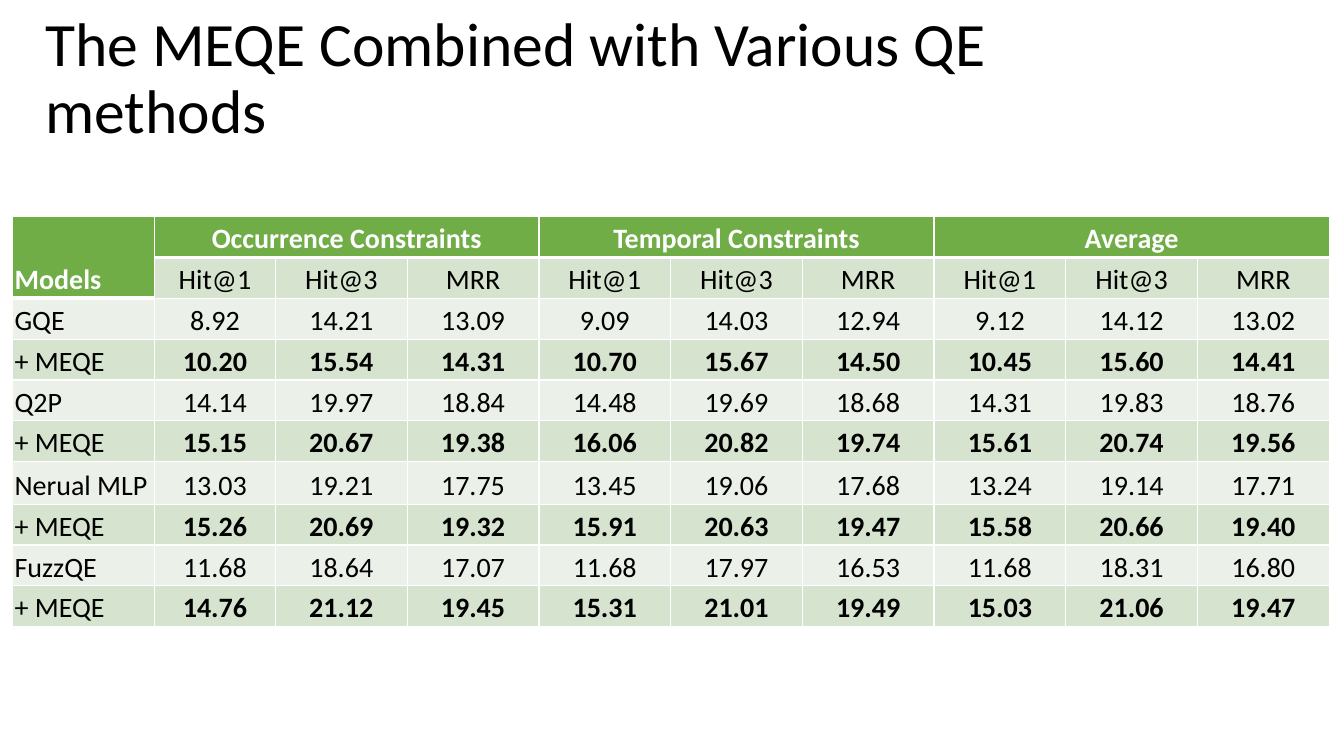
from dataclasses import dataclass

from lxml import etree
from pptx import Presentation
from pptx.dml.color import RGBColor
from pptx.enum import text
from pptx.oxml.ns import qn
from pptx.util import Pt

COLORS = {
    "white": "FFFFFF",
    "black": "000000",
    "header": "70AD47",
    "band_dark": "D5E3CF",
    "band_light": "EBF1E9",
}
FONT = "Calibri"
THIN, THICK = 1, 3
MODEL_WIDTH, FIRST_WIDTH, METRIC_WIDTH = 101.5, 86.4, 94.1
ROW_HEIGHT, TALL_ROW_HEIGHT = 29.15, 30.5
GROUPS = ["Occurrence Constraints", "Temporal Constraints", "Average"]
METRICS = ["Hit@1", "Hit@3", "MRR"]


@dataclass
class Result:
    model: str
    scores: str
    height: float = ROW_HEIGHT


RESULTS = [
    Result("GQE", "8.92 14.21 13.09 9.09 14.03 12.94 9.12 14.12 13.02"),
    Result("+ MEQE", "10.20 15.54 14.31 10.70 15.67 14.50 10.45 15.60 14.41"),
    Result("Q2P", "14.14 19.97 18.84 14.48 19.69 18.68 14.31 19.83 18.76"),
    Result("+ MEQE", "15.15 20.67 19.38 16.06 20.82 19.74 15.61 20.74 19.56"),
    Result("Nerual MLP", "13.03 19.21 17.75 13.45 19.06 17.68 13.24 19.14 17.71",
           TALL_ROW_HEIGHT),
    Result("+ MEQE", "15.26 20.69 19.32 15.91 20.63 19.47 15.58 20.66 19.40"),
    Result("FuzzQE", "11.68 18.64 17.07 11.68 17.97 16.53 11.68 18.31 16.80"),
    Result("+ MEQE", "14.76 21.12 19.45 15.31 21.01 19.49 15.03 21.06 19.47"),
]


def write(tf, words: str, *, size: float = 20, color: str = "black",
          bold: bool = False, align=text.PP_ALIGN.LEFT, spacing: float = 1.0) -> None:
    p = tf.paragraphs[0]
    p.alignment = align
    p.line_spacing = spacing
    r = p.add_run()
    r.text = words
    r.font.name = FONT
    r.font.size = Pt(size)
    r.font.bold = bold
    r.font.color.rgb = RGBColor.from_string(COLORS[color])


def style_cell(cell, fill: str, top: float, bottom: float) -> None:
    cell.margin_left = cell.margin_right = Pt(1.5)
    cell.margin_top = cell.margin_bottom = Pt(0.75)
    cell.vertical_anchor = text.MSO_ANCHOR.BOTTOM
    # Borders come before the fill in the cell properties
    tc_pr = cell._tc.get_or_add_tcPr()
    for side, width in (("L", THIN), ("R", THIN), ("T", top), ("B", bottom)):
        ln = etree.SubElement(tc_pr, qn(f"a:ln{side}"), w=str(Pt(width)))
        solid = etree.SubElement(ln, qn("a:solidFill"))
        etree.SubElement(solid, qn("a:srgbClr"), val=COLORS["white"])
    cell.fill.solid()
    cell.fill.fore_color.rgb = RGBColor.from_string(COLORS[fill])


def add_title(s, words: str) -> None:
    sp = s.shapes.add_textbox(Pt(25.2), Pt(5), Pt(849), Pt(104.4))
    tf = sp.text_frame
    tf.word_wrap = True
    tf.vertical_anchor = text.MSO_ANCHOR.MIDDLE
    write(tf, words, size=44, spacing=0.9)


def add_results_table(s) -> None:
    widths = [MODEL_WIDTH, FIRST_WIDTH] + [METRIC_WIDTH] * 8
    heights = [ROW_HEIGHT] * 2 + [result.height for result in RESULTS]
    table = s.shapes.add_table(len(heights), len(widths), Pt(8.9), Pt(154.8),
                               Pt(sum(widths)), Pt(sum(heights))).table
    for column, width in zip(table.columns, widths):
        column.width = Pt(width)
    for row, height in zip(table.rows, heights):
        row.height = Pt(height)

    # Fills and borders, with a heavy rule below the header
    def is_header(i: int, j: int) -> bool:
        return i == 0 or (i == 1 and j == 0)

    for i in range(len(heights)):
        band = "band_dark" if i % 2 else "band_light"
        for j in range(len(widths)):
            header = is_header(i, j)
            below_header = i > 0 and not header and is_header(i - 1, j)
            style_cell(table.cell(i, j), "header" if header else band,
                       THICK if below_header else THIN,
                       THICK if header else THIN)

    # Header rows
    center = text.PP_ALIGN.CENTER
    table.cell(0, 0).merge(table.cell(1, 0))
    write(table.cell(0, 0).text_frame, "Models", color="white", bold=True)
    for g, group in enumerate(GROUPS):
        first = 1 + g * len(METRICS)
        table.cell(0, first).merge(table.cell(0, first + len(METRICS) - 1))
        write(table.cell(0, first).text_frame, group, color="white", bold=True,
              align=center)
        for m, metric in enumerate(METRICS):
            write(table.cell(1, first + m).text_frame, metric, align=center)

    # Scores, bold where MEQE is added
    for i, result in enumerate(RESULTS, start=2):
        write(table.cell(i, 0).text_frame, result.model)
        for j, score in enumerate(result.scores.split(), start=1):
            write(table.cell(i, j).text_frame, score, align=center,
                  bold=result.model == "+ MEQE")


def main() -> None:
    prs = Presentation()
    prs.slide_width, prs.slide_height = Pt(960), Pt(540)
    s = prs.slides.add_slide(prs.slide_layouts[6])
    add_title(s, "The MEQE Combined with Various QE methods")
    add_results_table(s)
    prs.save("out.pptx")


if __name__ == "__main__":
    main()
